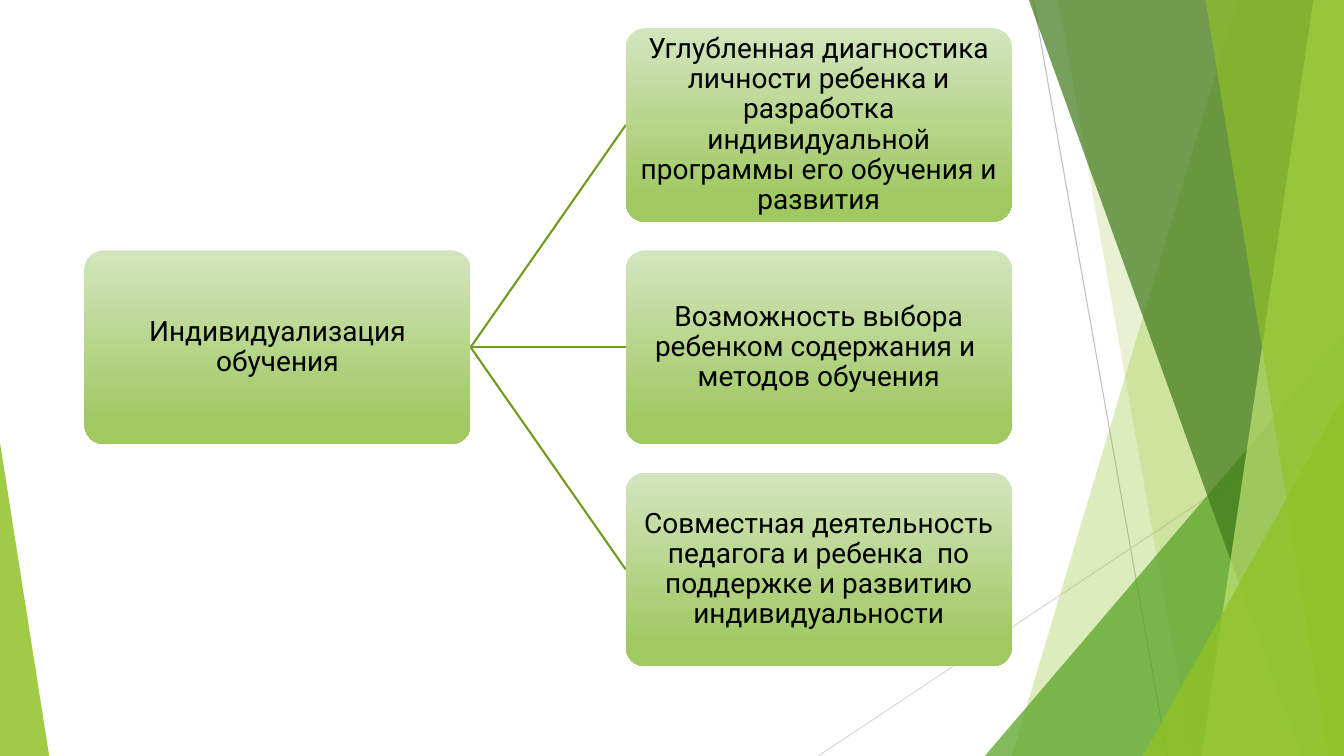
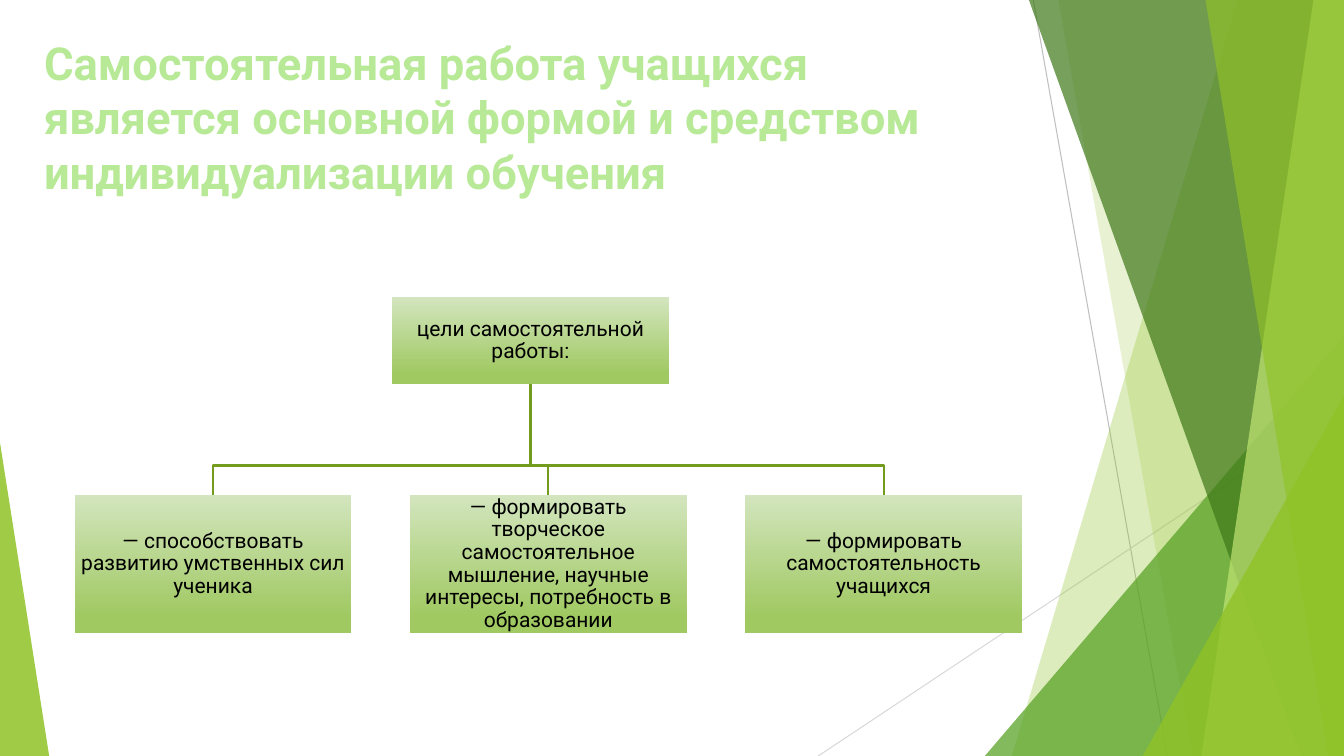
from dataclasses import dataclass
from typing import Any

from lxml.etree import SubElement as Sub
from pptx import Presentation
from pptx.dml.color import RGBColor as Rgb
from pptx.enum.shapes import MSO_CONNECTOR as Conn, MSO_SHAPE as Kind
from pptx.enum.text import MSO_ANCHOR as Anchor, PP_ALIGN as Align
from pptx.oxml.ns import qn
from pptx.util import Cm, Pt

WIDE, HIGH = 33.87, 19.05
HEX = {
    "lime": "90C226", "green": "54A021", "dark": "3F7819", "pale": "C0E474",
    "top": "D3E5BE", "base": "A0C962", "link": "739B1E", "title": "B7E996",
    "grey": "BFBFBF", "mist": "D9D9D9", "black": "000000",
}
PAD = {side: Cm(0.03) for side in
       ("margin_left", "margin_right", "margin_top", "margin_bottom")}
BODY = {"anchor": Anchor.MIDDLE, "text": "black", "align": Align.CENTER}
Point = tuple[float, float]


@dataclass
class Band:
    """Full-height band from a slanted left edge to the right slide edge."""
    top: float
    foot: float
    hue: str
    alpha: int


@dataclass
class Wedge:
    """Right triangle standing on the slide's bottom edge."""
    left: float
    top: float
    width: float
    tip: int
    hue: str
    alpha: int


@dataclass
class Box:
    left: float
    top: float
    width: float
    height: float
    text: str

    @property
    def mid(self) -> Point:
        return self.left + self.width / 2, self.top + self.height / 2


DECOR = [
    Band(31.19, 25.5, "lime", 30),
    Band(26.67, 30.05, "lime", 20),
    Wedge(24.82, 8.46, 9.05, 1, "green", 72),
    Band(25.93, 32.79, "dark", 70),
    Band(33.1, 30.28, "pale", 70),
    Band(30.38, 33.48, "lime", 65),
    Wedge(28.8, 9.98, 5.07, 1, "lime", 80),
    Wedge(0, 11.15, 1.24, 0, "lime", 85),
]


def color(name: str) -> Rgb:
    return Rgb.from_string(HEX[name])


def assign(item: Any, values: dict[str, Any]) -> None:
    for key, value in values.items():
        setattr(item, key, value)


def trace(slide: Any, points: list[Point], close: bool) -> Any:
    dots = [(Cm(x), Cm(y)) for x, y in points]
    pen = slide.shapes.build_freeform(*dots[0])
    pen.add_line_segments(dots[1:], close=close)
    shape = pen.convert_to_shape()
    shape.shadow.inherit = False
    return shape


def tint(shape: Any, hue: str, alpha: int) -> None:
    shape.fill.solid()
    shape.fill.fore_color.rgb = color(hue)
    shape.line.fill.background()
    node = shape.element.spPr.find(qn("a:solidFill"))[0]
    Sub(node, qn("a:alpha"), val=str(alpha * 1000))


def stroke(shape: Any, hue: str, width: float) -> None:
    shape.line.color.rgb = color(hue)
    shape.line.width = Pt(width)


def line(slide: Any, start: Point, end: Point, hue: str, width: float) -> None:
    ends = [Cm(value) for value in (*start, *end)]
    link = slide.shapes.add_connector(Conn.STRAIGHT, *ends)
    stroke(link, hue, width)
    Sub(link.element.spPr, qn("a:effectLst"))


def decor(slide: Any) -> None:
    line(slide, (26.04, 0), (29.42, HIGH), "grey", 0.75)
    line(slide, (WIDE, 10.24), (20.62, HIGH), "mist", 0.75)
    for part in DECOR:
        if isinstance(part, Band):
            edge = [(part.top, 0), (WIDE, 0), (WIDE, HIGH), (part.foot, HIGH)]
            shape = trace(slide, edge, True)
        else:
            shape = slide.shapes.add_shape(
                Kind.ISOSCELES_TRIANGLE, Cm(part.left), Cm(part.top),
                Cm(part.width), Cm(HIGH - part.top))
            shape.adjustments[0] = part.tip
            shape.shadow.inherit = False
        tint(shape, part.hue, part.alpha)


def write(frame: Any, text: str, hue: str, size: float, bold: bool) -> Any:
    frame.word_wrap = True
    para = frame.paragraphs[0]
    run = para.add_run()
    run.text = text
    assign(run.font, {"name": "Roboto", "size": Pt(size), "bold": bold})
    run.font.color.rgb = color(hue)
    return para


def card(slide: Any, box: Box, kind: Kind, size: float) -> None:
    shape = slide.shapes.add_shape(
        kind, Cm(box.left), Cm(box.top), Cm(box.width), Cm(box.height))
    shape.shadow.inherit = False
    if kind == Kind.ROUNDED_RECTANGLE:
        shape.adjustments[0] = 0.1
    shape.line.fill.background()
    shape.fill.gradient()
    shape.fill.gradient_angle = 270
    for stop, hue, place in zip(shape.fill.gradient_stops,
                                ("top", "base"), (0, 0.88)):
        stop.color.rgb = color(hue)
        stop.position = place
    frame = shape.text_frame
    assign(frame, PAD | {"vertical_anchor": Anchor.MIDDLE})
    para = write(frame, box.text, "black", size, False)
    assign(para, {"alignment": Align.CENTER, "line_spacing": 0.9})


def title(slide: Any, text: str) -> None:
    area = slide.shapes.add_textbox(Cm(0.86), Cm(0.76), Cm(23.88), Cm(5.08))
    para = write(area.text_frame, text, "title", 32.4, True)
    # Letter outline
    props = para.runs[0].font
    edge = Sub(para.runs[0]._r.get_or_add_rPr(), qn("a:ln"), w=str(Pt(1.75)))
    Sub(Sub(edge, qn("a:solidFill")), qn("a:srgbClr"), val=HEX["green"])
    props._element.insert(0, edge)


def choice(slide: Any) -> None:
    """Root on the left, three branches on the right."""
    root = Box(2.13, 6.31, 9.73, 4.88, "Индивидуализация обучения")
    texts = [
        "Углубленная диагностика личности ребенка и разработка "
        "индивидуальной программы его обучения и развития",
        "Возможность выбора ребенком содержания и  методов обучения",
        "Совместная деятельность педагога и ребенка  по поддержке "
        "и развитию индивидуальности",
    ]
    leaves = [Box(15.77, 0.71 + 5.6 * i, 9.73, 4.88, text)
              for i, text in enumerate(texts)]
    for leaf in leaves:
        line(slide, (root.left + root.width, root.mid[1]),
             (leaf.left, leaf.mid[1]), "link", 1.5)
    for box in [root, *leaves]:
        card(slide, box, Kind.ROUNDED_RECTANGLE, 20)


def goals(slide: Any) -> None:
    """Root above, three goals in a row below."""
    title(slide, "Самостоятельная работа учащихся является основной формой "
                 "и средством индивидуализации обучения")
    root = Box(9.88, 7.49, 6.98, 2.19, "цели самостоятельной работы:")
    texts = [
        "— способствовать развитию умственных сил ученика",
        "— формировать творческое самостоятельное мышление, "
        "научные интересы, потребность в образовании",
        "— формировать самостоятельность учащихся",
    ]
    leaves = [Box(1.88 + 8.45 * i, 12.47, 6.98, 3.49, text)
              for i, text in enumerate(texts)]
    bend, start = 11.73, root.mid[0]
    for leaf in leaves:
        end = leaf.mid[0]
        elbow = trace(slide, [(start, root.top + root.height), (start, bend),
                              (end, bend), (end, leaf.top)], False)
        elbow.fill.background()
        stroke(elbow, "link", 1.5)
    for box in [root, *leaves]:
        card(slide, box, Kind.RECTANGLE, 15)


def main() -> None:
    deck = Presentation()
    assign(deck, {"slide_width": Cm(WIDE), "slide_height": Cm(HIGH)})
    for fill in (choice, goals):
        slide = deck.slides.add_slide(deck.slide_layouts[6])
        decor(slide)
        fill(slide)
    deck.save("out.pptx")


if __name__ == "__main__":
    main()
